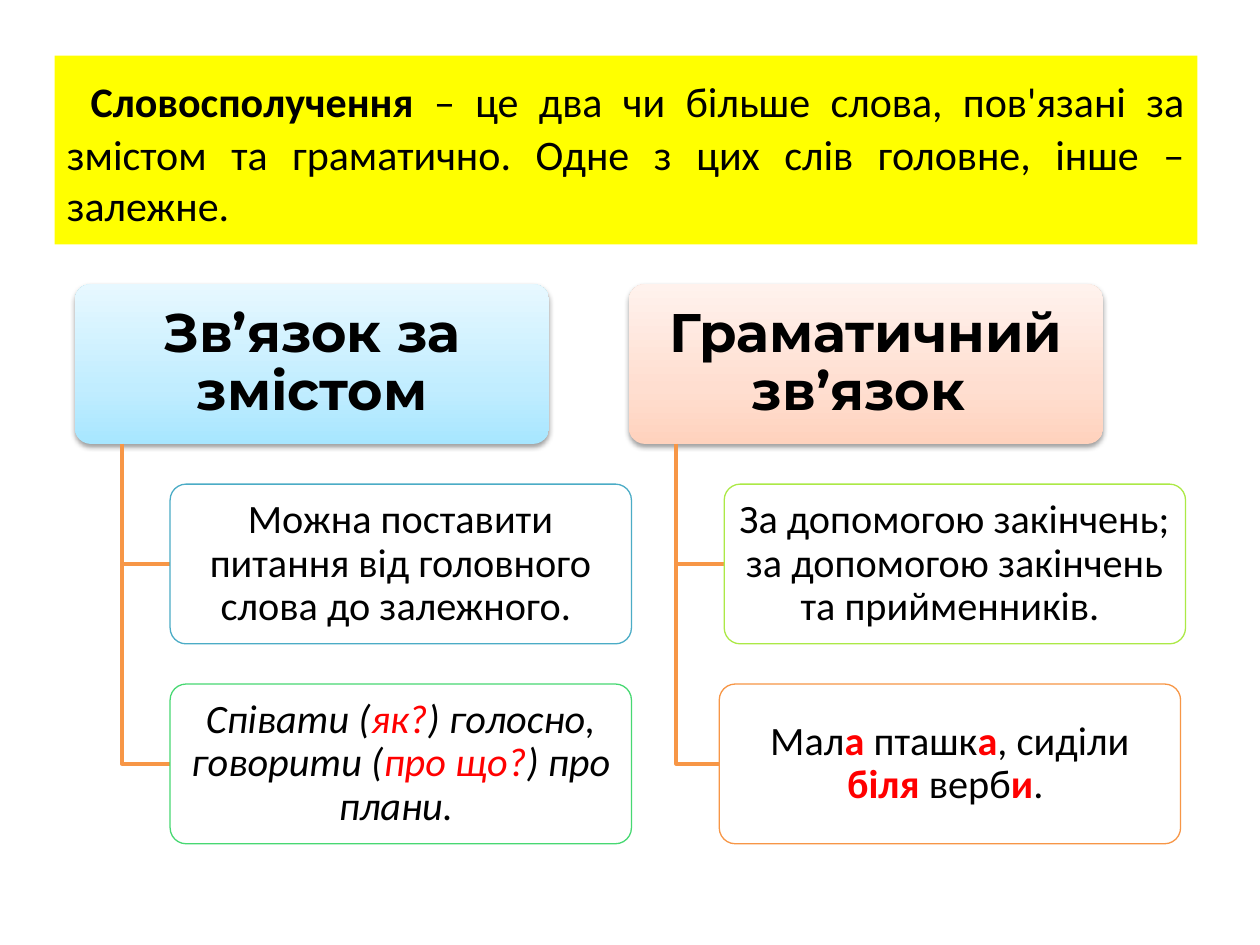
import copy

import pptx
import pptx.dml.color
import pptx.enum.shapes
import pptx.enum.text
import pptx.oxml
import pptx.oxml.ns
import pptx.util

Cm = pptx.util.Cm
Pt = pptx.util.Pt
qn = pptx.oxml.ns.qn
ALIGN = pptx.enum.text.PP_ALIGN


def color(value):
    return pptx.dml.color.RGBColor.from_string(value)


def add_card(left, top, width, spans, font_name, size, inset):
    card = page.shapes.add_shape(
        pptx.enum.shapes.MSO_SHAPE.ROUNDED_RECTANGLE,
        Cm(left), Cm(top), Cm(width), Cm(CARD_HEIGHT))
    card.adjustments[0] = 0.1
    card.shadow.inherit = False
    frame = card.text_frame
    frame.word_wrap = True
    frame.vertical_anchor = pptx.enum.text.MSO_ANCHOR.MIDDLE
    frame.margin_left = frame.margin_right = Cm(inset)
    frame.margin_top = frame.margin_bottom = Cm(inset - 0.05)
    para = frame.paragraphs[0]
    para.alignment = ALIGN.CENTER
    para.line_spacing = 0.9
    para.font.name = font_name
    para.font.size = Pt(size)
    para.font.color.rgb = color("000000")
    for text, style in spans:
        span = para.add_run()
        span.text = text
        span.font.color.rgb = color("FF0000" if "r" in style else "000000")
        if "b" in style:
            span.font.bold = True
        if "i" in style:
            span.font.italic = True
    return card


CARD_HEIGHT = 3.22
HEAD_LEFT, HEAD_TOP, HEAD_WIDTH = 1.51, 5.73, 9.56
TRUNK_LEFT = 2.46
CHILD_LEFT, CHILD_WIDTH = 3.43, 9.3
COLUMN_STEP, ROW_STEP = 11.17, 4.03

SHADOW = (
    '<a:outerShdw xmlns:a="http://schemas.openxmlformats.org/drawingml/2006/main" '
    'blurRad="40000" dist="20000" dir="5400000" rotWithShape="0">'
    '<a:srgbClr val="000000"><a:alpha val="38000"/></a:srgbClr></a:outerShdw>')

COLUMNS = [
    ("Зв’язок за змістом", ["A7E6FF", "C1EDFF", "E7F8FF"], [
        (0, "4BACC6", [
            ("Можна поставити питання від головного слова до залежного. ", "")]),
        (0, "47D872", [
            ("Співати (", "i"), ("як?", "ir"), (") голосно, говорити (", "i"),
            ("про що?", "ir"), (") про плани. ", "i")]),
    ]),
    ("Граматичний зв’язок ", ["FFD2BD", "FFDED0", "FFF2ED"], [
        (0, "ACE946", [
            ("За допомогою закінчень; за допомогою закінчень та прийменників. ", "")]),
        (-0.1, "F79646", [
            ("Мал", ""), ("а", "br"), (" пташк", ""), ("а", "br"),
            (", сиділи ", ""), ("біля", "br"), (" верб", ""), ("и", "br"),
            (". ", "")]),
    ]),
]

deck = pptx.Presentation()
deck.slide_width = Cm(25.4)
deck.slide_height = Cm(19.05)
page = deck.slides.add_slide(deck.slide_layouts[6])

definition = page.shapes.add_textbox(Cm(1.1), Cm(1.12), Cm(23.04), Cm(3.81))
definition.fill.solid()
definition.fill.fore_color.rgb = color("FFFF00")
definition.text_frame.word_wrap = True
para = definition.text_frame.paragraphs[0]
para.alignment = ALIGN.JUSTIFY
para.font.name = "Calibri"
para.font.color.rgb = color("000000")
for text, size, bold in [
    (" ", 32, False),
    ("Словосполучення", 24, True),
    (" – це два чи більше слова, пов'язані за змістом та граматично. "
     "Одне з цих слів головне, інше – залежне.", 24, False),
]:
    span = para.add_run()
    span.text = text
    span.font.size = Pt(size)
    span.font.bold = bold

for column, (title, shades, children) in enumerate(COLUMNS):
    shift = column * COLUMN_STEP
    head = add_card(HEAD_LEFT + shift, HEAD_TOP, HEAD_WIDTH,
                    [(title, "b")], "Montserrat", 31, 0.15)
    head.line.fill.background()
    head.fill.gradient()
    head.fill.gradient_angle = 90
    properties = head._element.spPr
    stop_list = properties.find(".//" + qn("a:gsLst"))
    stop_list.append(copy.deepcopy(stop_list[-1]))
    for stop, shade, position in zip(head.fill.gradient_stops, shades, [0, 0.35, 1]):
        stop.color.rgb = color(shade)
        stop.position = position
    properties.find(qn("a:effectLst")).append(pptx.oxml.parse_xml(SHADOW))

    for row, (nudge, outline, spans) in enumerate(children, 1):
        left = CHILD_LEFT + shift + nudge
        top = HEAD_TOP + row * ROW_STEP
        trunk = Cm(TRUNK_LEFT + shift)
        middle = Cm(top + CARD_HEIGHT / 2)
        builder = page.shapes.build_freeform(trunk, Cm(HEAD_TOP + CARD_HEIGHT))
        builder.add_line_segments([(trunk, middle), (Cm(left), middle)], close=False)
        branch = builder.convert_to_shape()
        branch.shadow.inherit = False
        branch.fill.background()
        branch.line.color.rgb = color("F79646")
        branch.line.width = Pt(2)

        child = add_card(left, top, CHILD_WIDTH, spans, "Calibri", 23, 0.13)
        child.fill.solid()
        child.fill.fore_color.rgb = color("FFFFFF")
        white = child._element.spPr.find(qn("a:solidFill"))[0]
        white.append(white.makeelement(qn("a:alpha"), {"val": "90000"}))
        child.line.color.rgb = color(outline)
        child.line.width = Pt(0.75)

deck.save("out.pptx")
